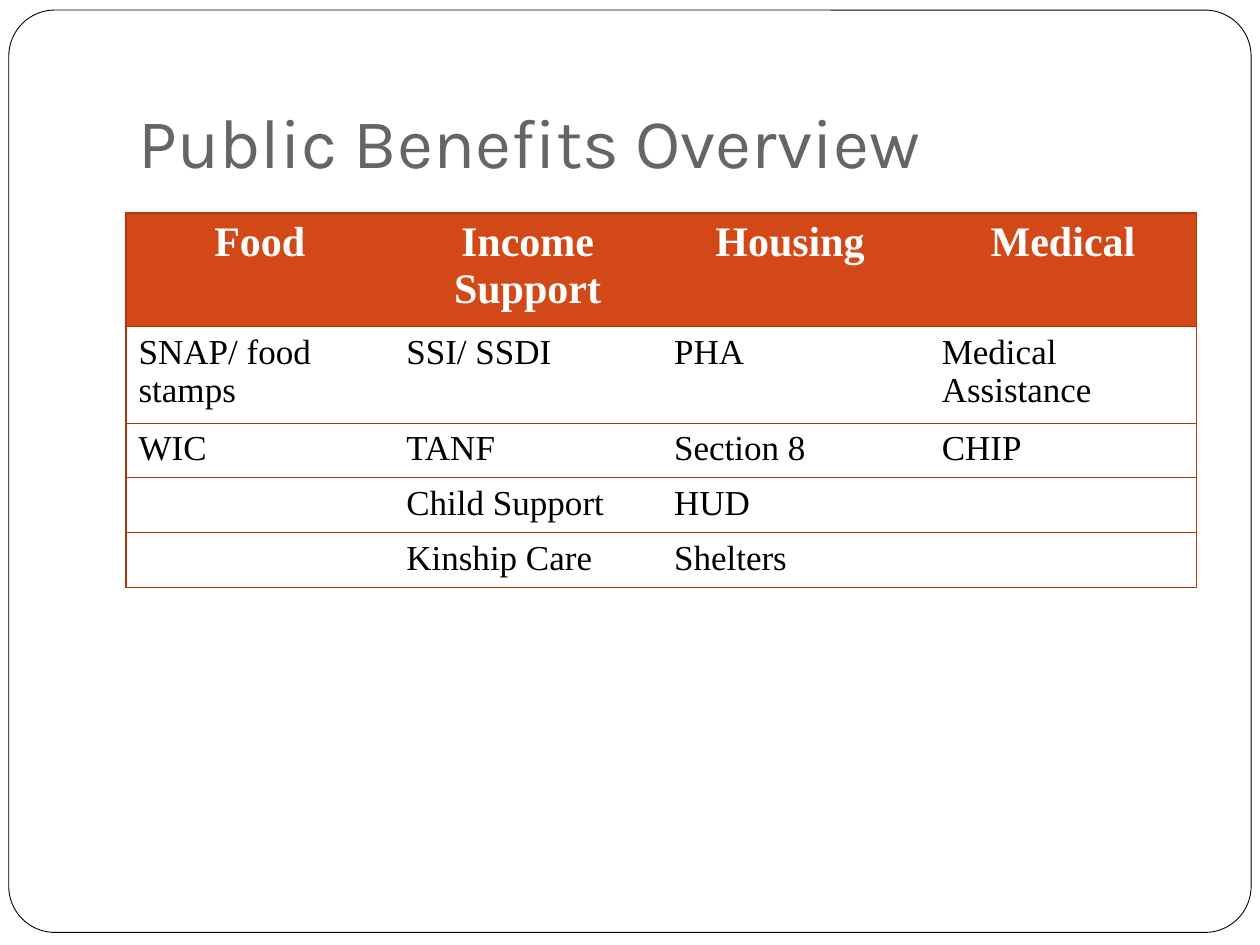
"""Build the Public Benefits Overview slide."""
from lxml.etree import SubElement
from pptx import Presentation
from pptx.dml.color import RGBColor
from pptx.enum.shapes import MSO_SHAPE as Shape
from pptx.enum.text import MSO_ANCHOR as Anchor, PP_ALIGN as Align
from pptx.oxml.ns import qn
from pptx.util import Inches, Pt

TITLE = "Public Benefits Overview"
BENEFITS = [
    ("Food", "Income Support", "Housing ", "Medical"),
    ("SNAP/ food stamps", "SSI/ SSDI", "PHA", "Medical Assistance"),
    ("WIC", "TANF", "Section 8", "CHIP"),
    ("", "Child Support", "HUD", ""),
    ("", "Kinship Care", "Shelters", ""),
]
COLORS = {"paper": "FFFFFF", "ink": "000000", "title": "696464",
          "header": "D34817", "rule": "B1360B"}
LEFT, WIDTH = 1, 8.5
ROW_HEIGHT = 0.41


def color(name):
    return RGBColor.from_string(COLORS[name])


def style(paragraph, font_name, size, ink, bold=False):
    for run in paragraph.runs:
        font = run.font
        font.name, font.size, font.bold = font_name, Pt(size), bold
        font.color.rgb = color(ink)


def add_border(cell, side, visible):
    line = SubElement(cell._tc.get_or_add_tcPr(), qn(f"a:ln{side}"), w=str(Pt(0.75)))
    if visible:
        fill = SubElement(line, qn("a:solidFill"))
        SubElement(fill, qn("a:srgbClr"), val=COLORS["rule"])
    else:
        SubElement(line, qn("a:noFill"))


def add_frame(slide):
    frame = slide.shapes.add_shape(Shape.ROUNDED_RECTANGLE, Inches(0.07), Inches(0.08),
                                   Inches(9.86), Inches(7.32))
    frame.adjustments[0] = 0.05
    frame.shadow.inherit = False
    frame.fill.solid()
    frame.fill.fore_color.rgb = color("paper")
    frame.line.color.rgb = color("ink")
    frame.line.width = Pt(0.5)


def add_title(slide):
    title = slide.shapes.add_textbox(Inches(LEFT), Inches(0.3), Inches(WIDTH), Inches(1.25))
    text = title.text_frame
    text.word_wrap = True
    text.vertical_anchor = Anchor.BOTTOM
    text.margin_bottom = Inches(0.1)
    text.text = TITLE
    style(text.paragraphs[0], "Karla", 40, "title")


def add_benefits(slide):
    rows, columns = len(BENEFITS), len(BENEFITS[0])
    table = slide.shapes.add_table(rows, columns, Inches(LEFT), Inches(1.69),
                                   Inches(WIDTH), Inches(ROW_HEIGHT * rows)).table
    table.horz_banding = False
    for r, benefits in enumerate(BENEFITS):
        header = r == 0
        for c, benefit in enumerate(benefits):
            cell = table.cell(r, c)
            add_border(cell, "L", c == 0)
            add_border(cell, "R", c == columns - 1)
            add_border(cell, "T", True)
            add_border(cell, "B", True)
            cell.fill.solid()
            cell.fill.fore_color.rgb = color("header" if header else "paper")
            cell.text_frame.text = benefit
            paragraph = cell.text_frame.paragraphs[0]
            paragraph.alignment = Align.CENTER if header else Align.LEFT
            style(paragraph, "Times New Roman", 24 if header else 20,
                  "paper" if header else "ink", header)


def main():
    deck = Presentation()
    deck.slide_width, deck.slide_height = Inches(10), Inches(7.5)
    slide = deck.slides.add_slide(deck.slide_layouts[6])
    add_frame(slide)
    add_title(slide)
    add_benefits(slide)
    deck.save("out.pptx")


if __name__ == "__main__":
    main()
